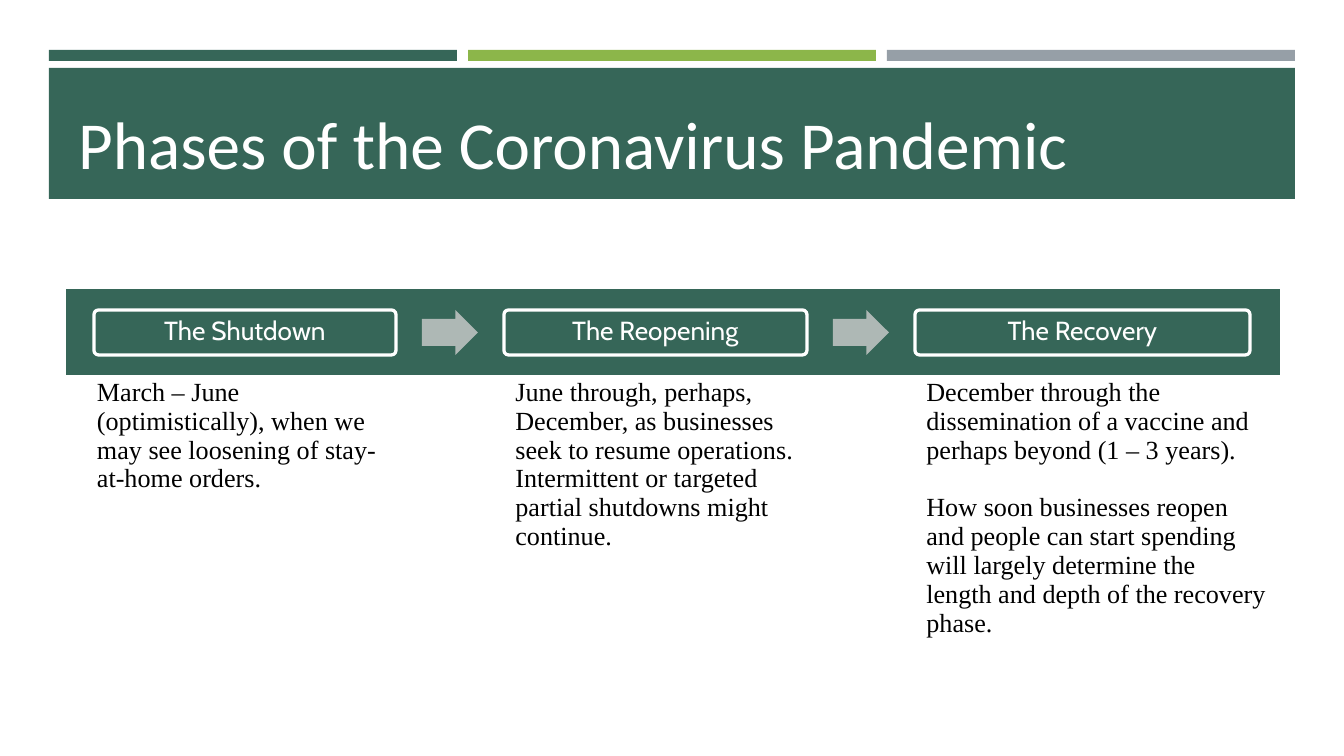
import pptx
import pptx.util
import pptx.dml.color
import pptx.enum.shapes
import pptx.enum.text
import pptx.oxml
import pptx.oxml.ns

PX = 914400 / 134.4
GREEN, LIME, GRAY, ARROW_GRAY = "366658", "8CB64A", "969FA7", "AEB8B5"
WHITE, BLACK = "FFFFFF", "000000"

TITLE = "Phases of the Coronavirus Pandemic"
# (name, box width, paragraphs)
PHASES = [
    ("The Shutdown", 302, [
        "March – June (optimistically), when we may see loosening of "
        "stay-at-home orders."]),
    ("The Reopening", 303, [
        "June through, perhaps, December, as businesses seek to resume operations. "
        "Intermittent or targeted partial shutdowns might continue."]),
    ("The Recovery", 335, [
        "December through the dissemination of a vaccine and perhaps beyond (1 – 3 years).",
        "How soon businesses reopen and people can start spending will largely "
        "determine the length and depth of the recovery phase."]),
]
COLUMN_WIDTHS = [351, 86, 335, 76, 368]
ROW_HEIGHTS = [90, 282]
BAR_WIDTH, BAR_GAP = 408, 11
BOX_TOP, BOX_HEIGHT = 310, 45
ARROW_WIDTH, ARROW_GAP = 56, 26

SHAPES = pptx.enum.shapes.MSO_SHAPE
ANCHOR = pptx.enum.text.MSO_ANCHOR
ALIGN = pptx.enum.text.PP_ALIGN


def px(length):
    return round(length * PX)


def color(value):
    return pptx.dml.color.RGBColor.from_string(value)


def add_block(kind, left, top, width, height, fill):
    shape = slide.shapes.add_shape(kind, px(left), px(top), px(width), px(height))
    shape.shadow.inherit = False
    shape.fill.solid()
    shape.fill.fore_color.rgb = color(fill)
    shape.line.fill.background()
    return shape


def style(paragraph, name, size, value, alignment=ALIGN.LEFT):
    paragraph.alignment = alignment
    paragraph.font.name = name
    paragraph.font.size = pptx.util.Pt(size)
    paragraph.font.color.rgb = color(value)


def set_borders(cell, widths):
    """Give the cell white edges; widths maps edge tags to points."""
    properties = cell._tc.get_or_add_tcPr()
    for index, (tag, points) in enumerate(widths.items()):
        properties.insert(index, pptx.oxml.parse_xml(
            f'<a:{tag} {pptx.oxml.ns.nsdecls("a")} w="{pptx.util.Pt(points)}">'
            f'<a:solidFill><a:srgbClr val="{WHITE}"/></a:solidFill></a:{tag}>'))


presentation = pptx.Presentation()
presentation.slide_width, presentation.slide_height = px(1344), px(756)
slide = presentation.slides.add_slide(presentation.slide_layouts[6])

# Title banner
for index, fill in enumerate([GREEN, LIME, GRAY]):
    add_block(SHAPES.RECTANGLE, 49 + index * (BAR_WIDTH + BAR_GAP), 50, BAR_WIDTH, 11, fill)
add_block(SHAPES.RECTANGLE, 49, 68, 1246, 131, GREEN)
title = slide.shapes.add_textbox(px(65), px(78), px(1216), px(112)).text_frame
title.word_wrap = True
title.vertical_anchor = ANCHOR.BOTTOM
title.text = TITLE
style(title.paragraphs[0], "Calibri", 36, WHITE)

# Table of phase descriptions
table = slide.shapes.add_table(2, len(COLUMN_WIDTHS), px(65), px(288),
                               px(sum(COLUMN_WIDTHS)), px(sum(ROW_HEIGHTS))).table
table.first_row = table.horz_banding = False
for column, width in zip(table.columns, COLUMN_WIDTHS):
    column.width = px(width)
for row, height in zip(table.rows, ROW_HEIGHTS):
    row.height = px(height)
for cell in table.iter_cells():
    cell.fill.background()
    cell.margin_top = cell.margin_bottom = 0

header = table.cell(0, 0)
header.merge(table.cell(0, len(COLUMN_WIDTHS) - 1))
header.fill.solid()
header.fill.fore_color.rgb = color(GREEN)
set_borders(header, {"lnL": 1, "lnR": 1, "lnT": 1, "lnB": 3})

for index, (name, width, paragraphs) in enumerate(PHASES):
    cell = table.cell(1, 2 * index)
    cell.text = "\n".join(paragraphs)
    for number, paragraph in enumerate(cell.text_frame.paragraphs):
        style(paragraph, "Times New Roman", 14, BLACK)
        if number:
            paragraph.space_before = pptx.util.Pt(15.5)
table.cell(1, 0).margin_left = px(32)

# Phase boxes joined by arrows
left = 94
for index, (name, width, paragraphs) in enumerate(PHASES):
    if index:
        arrow = add_block(SHAPES.RIGHT_ARROW, left + ARROW_GAP, BOX_TOP,
                          ARROW_WIDTH, BOX_HEIGHT, ARROW_GRAY)
        arrow.adjustments[0] = 0.6
        left += ARROW_WIDTH + 2 * ARROW_GAP
    box = add_block(SHAPES.ROUNDED_RECTANGLE, left, BOX_TOP, width, BOX_HEIGHT, GREEN)
    box.adjustments[0] = 0.1
    box.line.color.rgb = color(WHITE)
    box.line.width = pptx.util.Pt(1.75)
    box.text_frame.text = name
    box.text_frame.vertical_anchor = ANCHOR.MIDDLE
    label = box.text_frame.paragraphs[0]
    style(label, "Cabin", 14, WHITE, ALIGN.CENTER)
    label.line_spacing = 0.9
    left += width

presentation.save("out.pptx")
